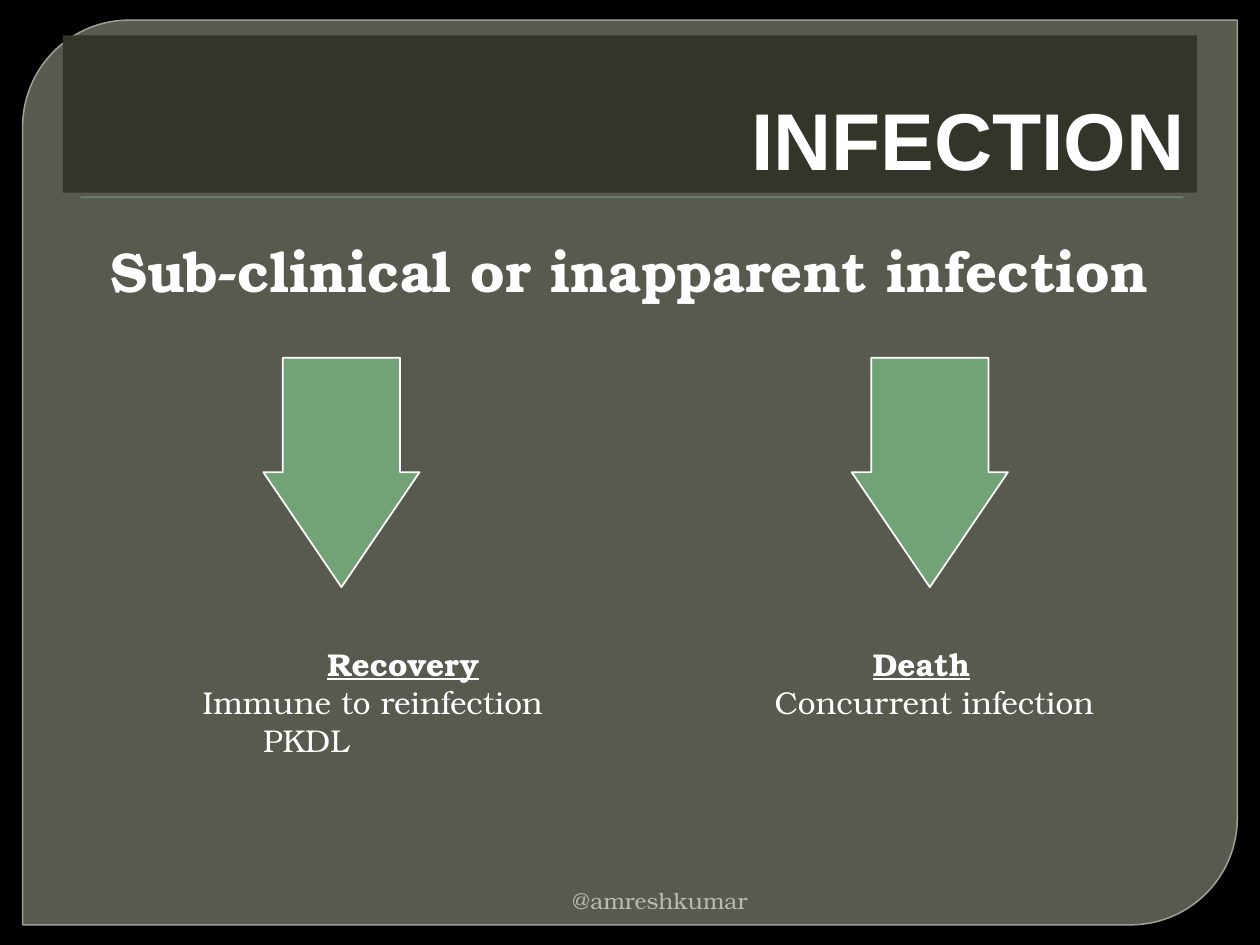
from dataclasses import dataclass

from lxml import etree
from pptx import Presentation
from pptx.dml.color import RGBColor
from pptx.enum.shapes import MSO_SHAPE
from pptx.enum.text import MSO_ANCHOR, PP_ALIGN
from pptx.oxml.ns import qn
from pptx.util import Inches, Pt

DIAGONAL, RECT, ARROW = (
    MSO_SHAPE.ROUND_2_DIAG_RECTANGLE, MSO_SHAPE.RECTANGLE, MSO_SHAPE.DOWN_ARROW)
LEFT, CENTER, RIGHT = PP_ALIGN.LEFT, PP_ALIGN.CENTER, PP_ALIGN.RIGHT
TOP, MIDDLE, BOTTOM = MSO_ANCHOR.TOP, MSO_ANCHOR.MIDDLE, MSO_ANCHOR.BOTTOM
COLS, ROWS = 100, 75


@dataclass(frozen=True)
class Theme:
    back: str = "000000"
    panel: str = "888B7B"
    edge: str = "9DA090"
    band: str = "34352A"
    accent: str = "72A376"
    text: str = "FFFFFF"
    muted: str = "B9BBB2"
    head_font: str = "Arial"
    body_font: str = "TeX Gyre Bonum"
    title: int = 46
    lead: int = 32
    body: int = 18
    small: int = 13


def add_text(p, text, font, size, color, bold=False, underline=False):
    r = p.add_run()
    r.text = text
    f = r.font
    f.name, f.size, f.bold, f.underline = font, Pt(size), bold, underline
    f.color.rgb = RGBColor.from_string(color)


def set_alpha(sp, percent):
    clr = sp._element.spPr.find(qn("a:solidFill")).find(qn("a:srgbClr"))
    etree.SubElement(clr, qn("a:alpha"), val=str(percent * 1000))


class Deck:
    def __init__(self, theme):
        self.theme = theme
        self.prs = Presentation()
        self.prs.slide_width, self.prs.slide_height = Inches(10), Inches(7.5)
        self.s = self.prs.slides.add_slide(self.prs.slide_layouts[6])
        fill = self.s.background.fill
        fill.solid()
        fill.fore_color.rgb = RGBColor.from_string(theme.back)

    def place(self, col, row, cols, rows):
        dx, dy = self.prs.slide_width / COLS, self.prs.slide_height / ROWS
        return [round(v) for v in (col * dx, row * dy, cols * dx, rows * dy)]

    def shape(self, kind, at, color, line=None, width=1, adj=(), alpha=None):
        sp = self.s.shapes.add_shape(kind, *self.place(*at))
        sp.shadow.inherit = False
        for i, value in enumerate(adj):
            sp.adjustments[i] = value
        sp.fill.solid()
        sp.fill.fore_color.rgb = RGBColor.from_string(color)
        if alpha:
            set_alpha(sp, alpha)
        if line:
            sp.line.color.rgb = RGBColor.from_string(line)
            sp.line.width = Pt(width)
        else:
            sp.line.fill.background()
        return sp

    def fill_text(self, sp, lines, align=LEFT, anchor=TOP, **style):
        tf = sp.text_frame
        tf.word_wrap, tf.vertical_anchor = True, anchor
        for i, (text, indent, extra) in enumerate(lines):
            p = tf.paragraphs[0] if i == 0 else tf.add_paragraph()
            p.alignment = align
            if indent:
                p._p.get_or_add_pPr().set("marL", str(Inches(indent)))
            add_text(p, text, **{**style, **extra})

    def text(self, at, lines, **style):
        sp = self.s.shapes.add_textbox(*self.place(*at))
        self.fill_text(sp, lines, **style)


def main():
    t = Theme()
    deck = Deck(t)
    deck.shape(DIAGONAL, (1.8, 1.6, 96.4, 71.8), t.panel, line=t.edge,
               width=0.87, adj=(0.118, 0), alpha=65)
    deck.shape(RECT, (6.4, 15.6, 87.5, 0.1), t.accent)

    title = deck.shape(RECT, (5, 2.8, 90, 12.5), t.band)
    deck.fill_text(title, [("INFECTION", 0, {})], align=RIGHT, anchor=BOTTOM,
                   font=t.head_font, size=t.title, color=t.text, bold=True)

    deck.text((7.5, 18.3, 85, 45), [("Sub-clinical or inapparent infection", 0, {})],
              align=CENTER, font=t.body_font, size=t.lead, color=t.text, bold=True)
    deck.text((14.2, 70, 46.1, 3), [("@amreshkumar", 0, {})], align=RIGHT,
              anchor=MIDDLE, font=t.body_font, size=t.small, color=t.muted)

    heading = {"bold": True, "underline": True}
    outcomes = [
        (20.9, 15.1, [("Recovery", 0.99, heading),
                      ("Immune to reinfection", 0, {}), ("PKDL", 0.48, {})]),
        (67.6, 60.5, [("Death", 0.78, heading), ("Concurrent infection", 0, {})]),
    ]
    for arrow_col, text_col, lines in outcomes:
        deck.text((text_col, 50.7, 34, 13), lines,
                  font=t.body_font, size=t.body, color=t.text)
        deck.shape(ARROW, (arrow_col, 28.4, 12.4, 18.2), t.accent,
                   line=t.text, adj=(0.75, 0.736))
    deck.prs.save("out.pptx")


if __name__ == "__main__":
    main()
